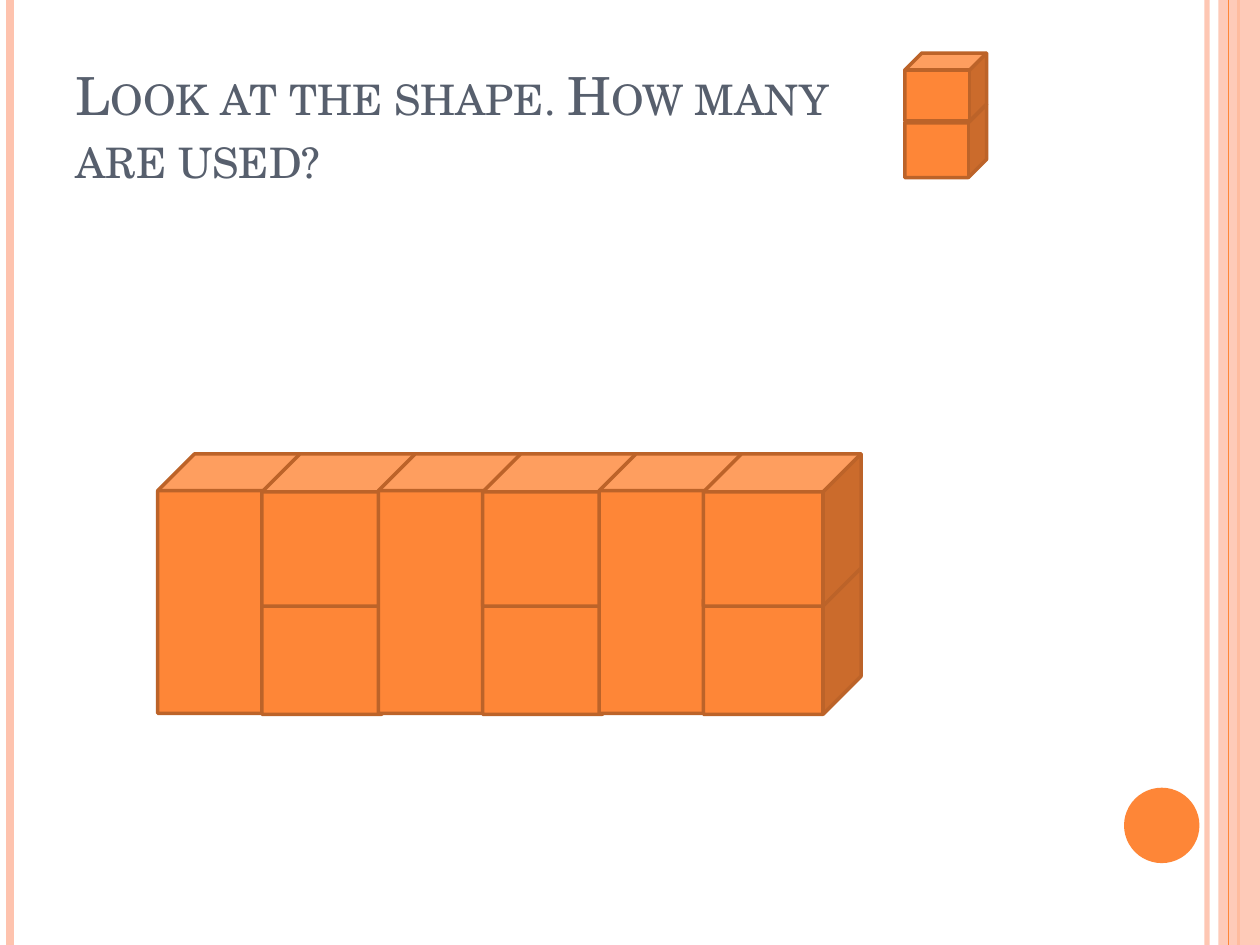
import pptx
import pptx.util
import pptx.dml.color
import pptx.enum.shapes
import pptx.enum.text
from lxml import etree
from pptx.oxml.ns import qn

Cm, Pt = pptx.util.Cm, pptx.util.Pt
RGB = pptx.dml.color.RGBColor
SHAPE = pptx.enum.shapes.MSO_SHAPE
ORANGE = RGB(0xFE, 0x86, 0x37)
BROWN = RGB(0xBC, 0x63, 0x29)
PEACH = RGB(0xFE, 0xC3, 0xAE)
SLATE = RGB(0x57, 0x5F, 0x6D)
FONT = "TeX Gyre Schola"

# Content, lengths in cm
WIDE, HIGH = 25.4, 19.05
TITLE = "Look at the shape. How many \vare used?"
RULES = [  # x, colour, points, opacity
    (24.33, PEACH, 3, 93),
    (0.2, PEACH, 4.5, 100),
    (24.97, ORANGE, 1.5, 100),
]
EDGE = (24.77, ORANGE, 0.75, 100)
BAND = (24.56, 0, 0.84, HIGH)
DOT = (22.66, 15.88, 1.52, 1.52)
SAMPLE = [(18.24, 2.11, 1.65, 1.47), (18.24, 1.07, 1.65, 1.37)]
TALL = (2.97, 5.23)
CUBE = (3.18, 3.07)
LEFT, TOP, LOW = 3.18, 9.15, 11.33
STEP, SHIFT, PAIRS = 4.45, 2.1, 3

deck = pptx.Presentation()
deck.slide_width, deck.slide_height = Cm(WIDE), Cm(HIGH)
slide = deck.slides.add_slide(deck.slide_layouts[5])


def fade(fill, pct):
    if pct < 100:
        clr = fill.find(".//" + qn("a:srgbClr"))
        etree.SubElement(clr, qn("a:alpha")).set("val", str(pct * 1000))


def rule(x, color, size, pct):
    line = slide.shapes.add_connector(
        pptx.enum.shapes.MSO_CONNECTOR.STRAIGHT, Cm(x), 0, Cm(x), Cm(HIGH))
    line.line.color.rgb = color
    line.line.width = Pt(size)
    props = line._element.spPr
    fade(props.find(qn("a:ln")), pct)
    etree.SubElement(props, qn("a:effectLst"))


def block(kind, box, color, edge=None):
    shape = slide.shapes.add_shape(kind, *map(Cm, box))
    shape.shadow.inherit = False
    shape.fill.solid()
    shape.fill.fore_color.rgb = color
    if edge is None:
        shape.line.fill.background()
    else:
        shape.line.color.rgb = edge
        shape.line.width = Pt(2)
    return shape


# Side decoration
for item in RULES:
    rule(*item)
band = block(SHAPE.RECTANGLE, BAND, PEACH)
fade(band._element.spPr.find(qn("a:solidFill")), 87)
rule(*EDGE)
block(SHAPE.OVAL, DOT, ORANGE)

# Title
title = slide.shapes.title
title.left, title.top, title.width, title.height = map(
    Cm, (1.27, 0.76, 20.75, 3.18))
frame = title.text_frame
frame.text = TITLE
frame.word_wrap = True
frame.auto_size = pptx.enum.text.MSO_AUTO_SIZE.NONE
frame.vertical_anchor = pptx.enum.text.MSO_ANCHOR.BOTTOM
para = frame.paragraphs[0]
para.alignment = pptx.enum.text.PP_ALIGN.LEFT
for run in para.runs:
    run.font.name = FONT
    run.font.size = Pt(30)
    run.font.color.rgb = SLATE
    run.font._element.set("cap", "small")

# Sample stack, then tall blocks alternating with stacked cubes
boxes = list(SAMPLE)
for i in range(PAIRS):
    x = LEFT + i * STEP
    boxes += [(x, TOP, *TALL),
              (x + SHIFT, LOW, *CUBE),
              (x + SHIFT, TOP, *CUBE)]
for box in boxes:
    block(SHAPE.CUBE, box, ORANGE, BROWN)

deck.save("out.pptx")
